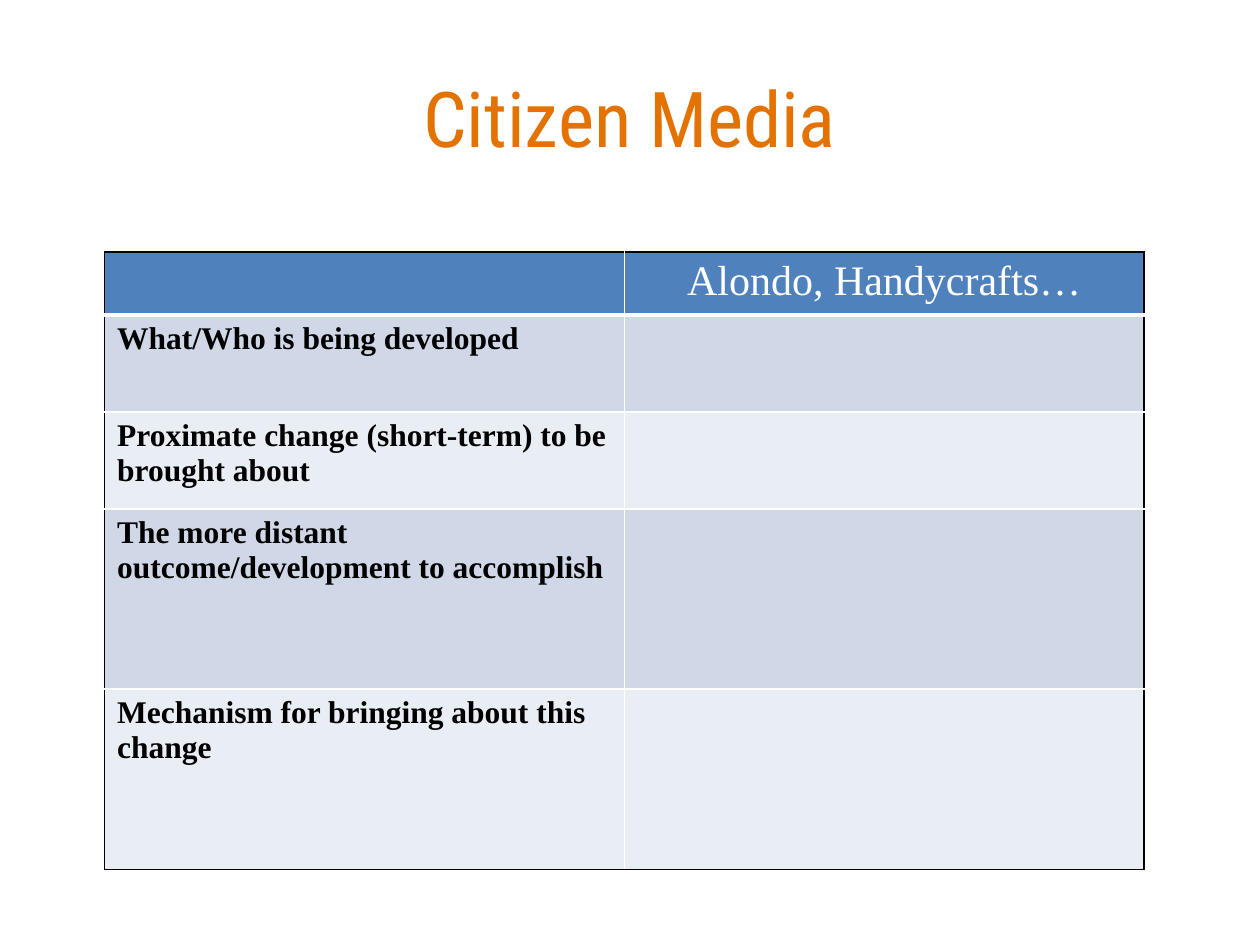
import pptx
import pptx.util
import pptx.dml.color
import pptx.enum.text
from lxml import etree

Inches, Pt = pptx.util.Inches, pptx.util.Pt
RGBColor = pptx.dml.color.RGBColor
PP_ALIGN = pptx.enum.text.PP_ALIGN

# Content
TITLE = "Citizen Media"
ROWS = [
    ("", "Alondo, Handycrafts…"),
    ("What/Who is being developed", ""),
    ("Proximate change (short-term) to be brought about", ""),
    ("The more distant outcome/development to accomplish", ""),
    ("Mechanism for bringing about this change", ""),
]
ROW_HEIGHTS = [0.5, 0.77, 0.77, 1.43, 1.43]
TABLE_LEFT, TABLE_TOP, TABLE_WIDTH = 0.83, 2, 8.25

# Colours and formats
ORANGE = RGBColor(0xE4, 0x72, 0x00)
BLUE = RGBColor(0x4F, 0x81, 0xBD)
BANDS = [RGBColor(0xD0, 0xD8, 0xE8), RGBColor(0xE9, 0xED, 0xF4)]
WHITE = RGBColor(0xFF, 0xFF, 0xFF)
BLACK = RGBColor(0x00, 0x00, 0x00)
SERIF = "Times New Roman"
TITLE_FONT = dict(name="Roboto Condensed", size=Pt(44), bold=False)
HEAD_FONT = dict(name=SERIF, size=Pt(24), bold=False)
LABEL_FONT = dict(name=SERIF, size=Pt(18), bold=True)
NS = "http://schemas.openxmlformats.org/drawingml/2006/main"


def write(tf, text, font, color, align):
    p = tf.paragraphs[0]
    p.alignment = align
    # An empty cell keeps its size through the paragraph font
    target = p.add_run().font if text else p.font
    if text:
        p.runs[0].text = text
    for key, value in font.items():
        setattr(target, key, value)
    target.color.rgb = color


def border(cell, side, color, width):
    ln = etree.SubElement(cell._tc.get_or_add_tcPr(), f"{{{NS}}}ln{side}", w=str(Pt(width)))
    fill = etree.SubElement(ln, f"{{{NS}}}solidFill")
    etree.SubElement(fill, f"{{{NS}}}srgbClr", val=str(color))


prs = pptx.Presentation()
prs.slide_width, prs.slide_height = Inches(10), Inches(7.5)
s = prs.slides.add_slide(prs.slide_layouts[5])

# Title
title = s.shapes.title
title.left, title.top, title.width, title.height = map(Inches, (0.5, 0.3, 9, 1.25))
title.text_frame.vertical_anchor = pptx.enum.text.MSO_ANCHOR.MIDDLE
write(title.text_frame, TITLE, TITLE_FONT, ORANGE, PP_ALIGN.CENTER)

# Table
n_rows, n_cols = len(ROWS), len(ROWS[0])
table = s.shapes.add_table(n_rows, n_cols, *map(
    Inches, (TABLE_LEFT, TABLE_TOP, TABLE_WIDTH, sum(ROW_HEIGHTS)))).table
for col in table.columns:
    col.width = Inches(TABLE_WIDTH / n_cols)

for i, (texts, height) in enumerate(zip(ROWS, ROW_HEIGHTS)):
    table.rows[i].height = Inches(height)
    head = i == 0
    for j, text in enumerate(texts):
        cell = table.cell(i, j)
        # Black outer frame, white inner rules, heavier rule under the header
        outer = dict(L=j == 0, R=j == n_cols - 1, T=head, B=i == n_rows - 1)
        for side, is_outer in outer.items():
            border(cell, side, BLACK if is_outer else WHITE, 3 if head and side == "B" else 1)
        cell.fill.solid()
        cell.fill.fore_color.rgb = BLUE if head else BANDS[(i - 1) % 2]
        write(cell.text_frame, text, HEAD_FONT if head else LABEL_FONT,
              WHITE if head else BLACK, PP_ALIGN.CENTER if head else PP_ALIGN.LEFT)

prs.save("out.pptx")
